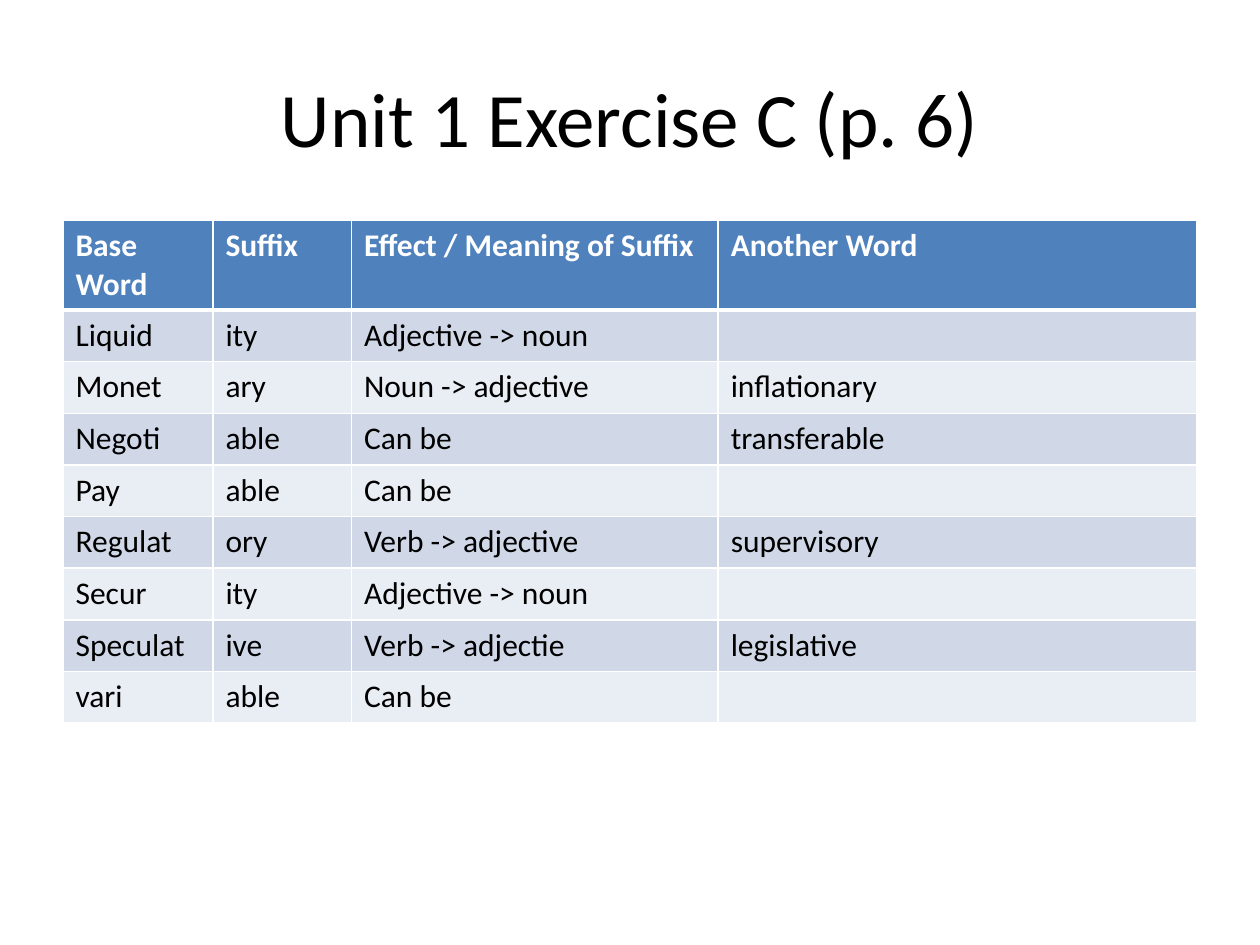
from pptx import Presentation
from pptx import util as u
from pptx.dml.color import RGBColor
from pptx.enum import text
from pptx.oxml import ns
from lxml import etree

COLORS = {
    "ink": "000000",
    "white": "FFFFFF",
    "header": "4F81BD",
    "odd": "D0D8E8",
    "even": "E9EDF4",
}
COLUMN_WIDTHS = [1.19, 1.1, 2.91, 3.8]
HEADER_HEIGHT, ROW_HEIGHT = 0.7, 0.41
SUFFIX_ROWS = [
    ["Base Word", "Suffix", "Effect / Meaning of Suffix", "Another Word"],
    ["Liquid", "ity", "Adjective -> noun", ""],
    ["Monet", "ary", "Noun -> adjective", "inflationary"],
    ["Negoti", "able", "Can be", "transferable"],
    ["Pay", "able", "Can be", ""],
    ["Regulat", "ory", "Verb -> adjective", "supervisory"],
    ["Secur", "ity", "Adjective -> noun", ""],
    ["Speculat", "ive", "Verb -> adjectie", "legislative"],
    ["vari", "able", "Can be", ""],
]


class SlideBuilder:
    def __init__(self, slide, font_name):
        self.slide = slide
        self.font_name = font_name

    def format_text(self, paragraph, size, color, bold=False):
        values = {"name": self.font_name, "size": u.Pt(size), "bold": bold}
        for name, value in values.items():
            setattr(paragraph.font, name, value)
        paragraph.font.color.rgb = RGBColor.from_string(COLORS[color])

    def title(self, words, left, top, width, height):
        shape = self.slide.shapes.title
        box = {"left": left, "top": top, "width": width, "height": height}
        for name, value in box.items():
            setattr(shape, name, u.Inches(value))
        frame = shape.text_frame
        frame.text = words
        frame.vertical_anchor = text.MSO_ANCHOR.MIDDLE
        frame.paragraphs[0].alignment = text.PP_ALIGN.CENTER
        self.format_text(frame.paragraphs[0], 44, "ink")

    def border(self, cell, side, points):
        properties = cell._tc.get_or_add_tcPr()
        line = etree.SubElement(properties, ns.qn(f"a:ln{side}"), w=str(u.Pt(points)))
        fill = etree.SubElement(line, ns.qn("a:solidFill"))
        etree.SubElement(fill, ns.qn("a:srgbClr"), val=COLORS["white"])

    def cell(self, cell, words, row):
        is_header = row == 0
        widths = {"L": 1, "R": 1, "T": 3 if row == 1 else 1, "B": 3 if is_header else 1}
        for side, points in widths.items():
            self.border(cell, side, points)
        band = "header" if is_header else "odd" if row % 2 else "even"
        cell.fill.solid()
        cell.fill.fore_color.rgb = RGBColor.from_string(COLORS[band])
        cell.text = words
        color = "white" if is_header else "ink"
        self.format_text(cell.text_frame.paragraphs[0], 18, color, is_header)

    def table(self, rows, left, top):
        heights = [HEADER_HEIGHT] + [ROW_HEIGHT] * (len(rows) - 1)
        size = [u.Inches(sum(COLUMN_WIDTHS)), u.Inches(sum(heights))]
        frame = self.slide.shapes.add_table(
            len(rows), len(COLUMN_WIDTHS), u.Inches(left), u.Inches(top), *size
        )
        table = frame.table
        for column, width in zip(table.columns, COLUMN_WIDTHS):
            column.width = u.Inches(width)
        for row, (height, entries) in enumerate(zip(heights, rows)):
            table.rows[row].height = u.Inches(height)
            for column, words in enumerate(entries):
                self.cell(table.cell(row, column), words, row)


def main():
    presentation = Presentation()
    presentation.slide_width = u.Inches(10)
    presentation.slide_height = u.Inches(7.5)
    slide = presentation.slides.add_slide(presentation.slide_layouts[5])
    builder = SlideBuilder(slide, "Calibri")
    builder.title("Unit 1 Exercise C (p. 6)", 0.5, 0.3, 9, 1.25)
    builder.table(SUFFIX_ROWS, 0.5, 1.75)
    presentation.save("out.pptx")


if __name__ == "__main__":
    main()
